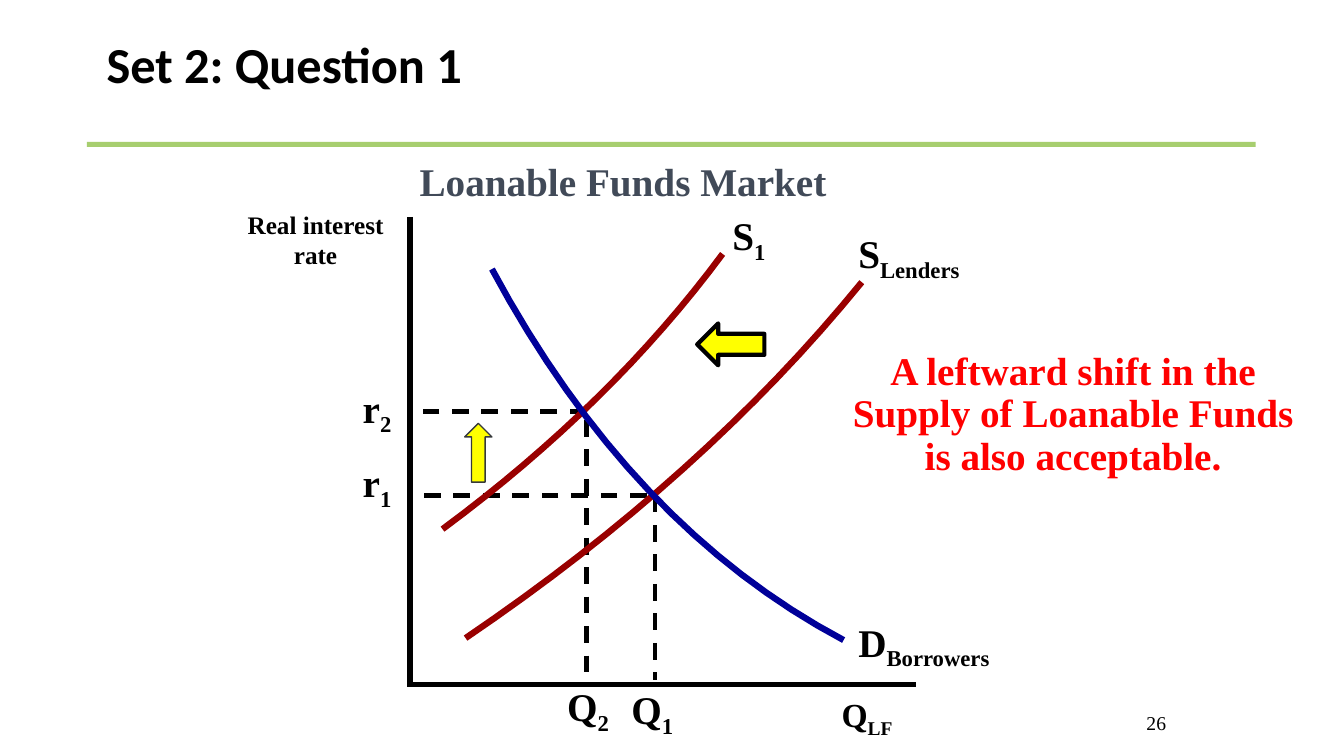
from collections import namedtuple

from lxml.etree import SubElement
from pptx import Presentation
from pptx.dml.color import RGBColor
from pptx.enum.dml import MSO_LINE
from pptx.enum.shapes import MSO_CONNECTOR, MSO_SHAPE
from pptx.enum.text import MSO_ANCHOR as Anchor, PP_ALIGN as Align
from pptx.oxml.ns import qn
from pptx.util import Pt

BLACK = RGBColor(0x00, 0x00, 0x00)
SLATE = RGBColor(0x41, 0x4A, 0x58)
GREEN = RGBColor(0xA7, 0xCE, 0x6F)
YELLOW = RGBColor(0xFF, 0xFF, 0x00)
CHARCOAL = RGBColor(0x36, 0x39, 0x3B)
RED = RGBColor(0xFF, 0x00, 0x00)
SUPPLY_RED = RGBColor(0x99, 0x00, 0x00)
DEMAND_BLUE = RGBColor(0x00, 0x00, 0x99)
SERIF = "Times New Roman"

Box = namedtuple("Box", "left top width height")


def inside(box, left, top, width, height):
    return Box(box.left + left, box.top + top, width, height)


def add_text(slide, box, text, size, subscript="", color=BLACK, bold=True,
             font=SERIF, align=Align.LEFT, anchor=Anchor.TOP, spacing=None):
    frame = slide.shapes.add_textbox(*map(Pt, box)).text_frame
    frame.word_wrap = True
    frame.vertical_anchor = anchor
    para = frame.paragraphs[0]
    para.alignment = align
    if spacing:
        para.line_spacing = spacing
    for part in filter(None, (text, subscript)):
        span = para.add_run()
        span.text = part
        span.font.name = font
        span.font.size = Pt(size)
        span.font.bold = bold
        span.font.color.rgb = color
    if subscript:
        span.font._element.set("baseline", "-25000")


def add_line(slide, box, start, end, weight, dashed=False):
    line = slide.shapes.add_connector(
        MSO_CONNECTOR.STRAIGHT,
        Pt(box.left + start[0]), Pt(box.top + start[1]),
        Pt(box.left + end[0]), Pt(box.top + end[1]))
    line.line.color.rgb = BLACK
    line.line.width = Pt(weight)
    if dashed:
        line.line.dash_style = MSO_LINE.DASH
    SubElement(line._element.spPr, qn("a:effectLst"))


def add_filled(slide, preset, box, fill, outline=None, weight=1):
    shape = slide.shapes.add_shape(preset, *map(Pt, box))
    shape.shadow.inherit = False
    shape.fill.solid()
    shape.fill.fore_color.rgb = fill
    if outline is None:
        shape.line.fill.background()
    else:
        shape.line.color.rgb = outline
        shape.line.width = Pt(weight)


def add_curve(slide, box, start, control, end, color, steps=16):
    points = []
    for step in range(steps + 1):
        t = step / steps
        x, y = ((1 - t) ** 2 * a + 2 * t * (1 - t) * b + t ** 2 * c
                for a, b, c in zip(start, control, end))
        points.append((Pt(box.left + x), Pt(box.top + y)))
    builder = slide.shapes.build_freeform(*points[0])
    builder.add_line_segments(points[1:], close=False)
    curve = builder.convert_to_shape()
    curve.shadow.inherit = False
    curve.fill.background()
    curve.line.color.rgb = color
    curve.line.width = Pt(4.5)


def add_header(slide, box):
    add_text(slide, inside(box, 7, 0, 671, 51), "Set 2: Question 1", 36,
             font="Calibri")
    add_filled(slide, MSO_SHAPE.RECTANGLE,
               inside(box, 0, box.height - 3.6, box.width, 3.6), GREEN)


def add_graph(slide, box):
    add_text(slide, inside(box, -208, -53.5, 720, 55.5),
             "Loanable Funds Market", 28, color=SLATE,
             align=Align.CENTER, anchor=Anchor.MIDDLE)
    add_text(slide, inside(box, -135.3, -9, 135.4, 64.8),
             "Real interest rate", 18, align=Align.CENTER)

    add_line(slide, box, (0, 0), (0, box.height + 2), 4)
    add_line(slide, box, (-2, box.height), (box.width, box.height), 4)

    guides = [
        ((126, 139), (1, 139)),
        ((126, 145), (126, 325)),
        ((169, 199), (1, 199)),
        ((175, 199), (175, 331)),
    ]
    for start, end in guides:
        add_line(slide, box, start, end, 3, dashed=True)

    curves = [
        ((39.6, 300.8), (209.2, 185.9), (322.6, 46.6), SUPPLY_RED),
        ((23.1, 223), (143.3, 134.1), (223.2, 26.4), SUPPLY_RED),
        ((58.4, 37.2), (157.4, 221.6), (309.6, 302.2), DEMAND_BLUE),
    ]
    for start, control, end, color in curves:
        add_curve(slide, box, start, control, end, color)

    labels = [
        ("S", "Lenders", 28, 313, 5.6, 97),
        ("S", "1", 28, 223, -7.4, 44),
        ("D", "Borrowers", 28, 313, 282.8, 223),
        ("Q", "LF", 24, 301, 336.8, 201),
        ("Q", "1", 28, 151, 331, 86),
        ("Q", "2", 28, 105, 328.8, 46),
        ("r", "1", 28, -41, 169, 39),
        ("r", "2", 28, -41, 115.7, 51),
    ]
    for letter, subscript, size, left, top, width in labels:
        add_text(slide, inside(box, left, top, width, 41), letter, size,
                 subscript)

    add_filled(slide, MSO_SHAPE.LEFT_ARROW, inside(box, 205, 76, 48, 30),
               YELLOW, BLACK, 3)
    add_filled(slide, MSO_SHAPE.UP_ARROW, inside(box, 39, 147.4, 19.4, 42),
               YELLOW, CHARCOAL)


def add_answer(slide, box):
    add_text(slide, box, "A leftward shift in the Supply of Loanable "
             "Funds is also acceptable.", 28, color=RED,
             align=Align.CENTER, spacing=0.9)


def add_page_number(slide, box):
    add_text(slide, box, "26", 14, bold=False, align=Align.RIGHT)


def main():
    deck = Presentation()
    deck.slide_width = Pt(960)
    deck.slide_height = Pt(540)
    page = deck.slides.add_slide(deck.slide_layouts[6])
    add_header(page, Box(62, 20, 835, 85))
    add_graph(page, Box(293, 155, 361, 334))
    add_answer(page, Box(602, 247.7, 329, 107))
    add_page_number(page, Box(690, 504, 150, 36))
    deck.save("out.pptx")


if __name__ == "__main__":
    main()
